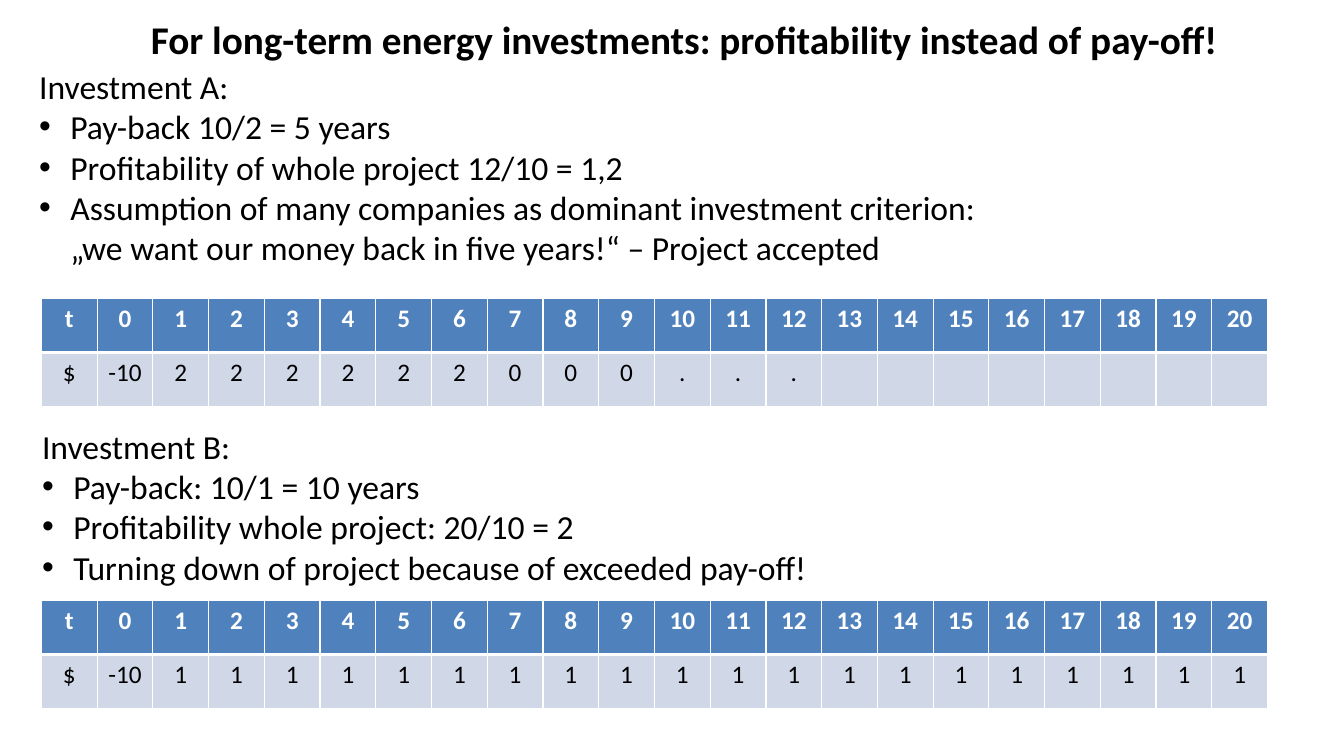
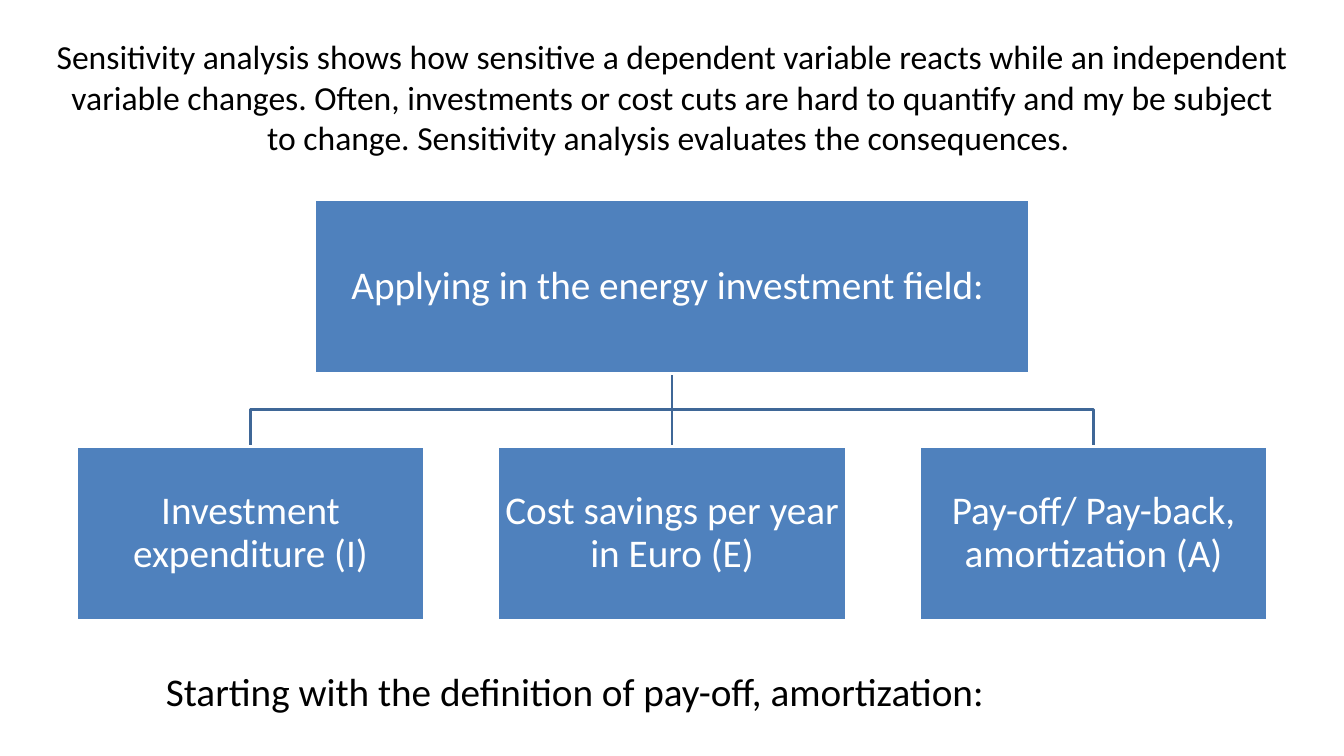
from lxml.etree import SubElement
from pptx import Presentation
from pptx.dml.color import RGBColor
from pptx.enum.shapes import MSO_CONNECTOR as CONNECTOR, MSO_SHAPE as SHAPE
from pptx.enum.text import MSO_ANCHOR as ANCHOR, PP_ALIGN as ALIGN
from pptx.oxml.ns import qn
from pptx.util import Inches, Pt

COLORS = {
    "text": "000000",
    "white": "FFFFFF",
    "blue": "4F81BD",
    "pale": "D0D8E8",
    "line": "3F6797",
}
COLORS = {name: RGBColor.from_string(value) for name, value in COLORS.items()}
FONT = "Calibri"
INDENT = Inches(0.31)

presentation = Presentation()
presentation.slide_width = Inches(13.33)
presentation.slide_height = Inches(7.5)
blank = presentation.slide_layouts[6]


def place(*percents):
    """Turn percentages of the slide's width and height, in turn, into lengths."""
    sides = (presentation.slide_width, presentation.slide_height) * 2
    return [round(side * percent / 100) for side, percent in zip(sides, percents)]


def write(frame, *lines, size=24, color="text", bold=False, align=ALIGN.LEFT,
          spacing=None, bulleted=False):
    """Fill a text frame; with bulleted, every line after the first gets a bullet."""
    frame.word_wrap = True
    for number, line in enumerate(lines):
        paragraph = frame.add_paragraph() if number else frame.paragraphs[0]
        paragraph.text = line
        paragraph.alignment = align
        paragraph.line_spacing = spacing
        for run in paragraph.runs:
            run.font.name = FONT
            run.font.size = Pt(size)
            run.font.bold = bold
            run.font.color.rgb = COLORS[color]
        if bulleted and number:
            properties = paragraph._p.get_or_add_pPr()
            properties.set("marL", str(INDENT))
            properties.set("indent", str(-INDENT))
            SubElement(properties, qn("a:buFont"), typeface="Arial")
            SubElement(properties, qn("a:buChar"), char="•")


# Slide 1: two investments compared
slide = presentation.slides.add_slide(blank)
title = slide.shapes.add_textbox(*place(7.45, 1.4, 86.87, 7.6))
write(title.text_frame,
      "For long-term energy investments: profitability instead of pay-off!",
      size=28, bold=True, align=ALIGN.CENTER)

years = ["t"] + [str(year) for year in range(21)]
investments = [
    {
        "box": (2.17, 8.05, 81.1, 28.27),
        "lines": ["Investment A:",
                  "Pay-back 10/2 = 5 years",
                  "Profitability of whole project 12/10 = 1,2",
                  "Assumption of many companies as dominant investment criterion: \n"
                  "„we want our money back in five years!“ – Project accepted"],
        "table_top": 39.45,
        "flows": ["2"] * 6 + ["0"] * 3 + ["."] * 3 + [""] * 8,
    },
    {
        "box": (2.39, 55.64, 68.1, 26.93),
        "lines": ["Investment B:",
                  "Pay-back: 10/1 = 10 years",
                  "Profitability whole project: 20/10 = 2",
                  "Turning down of project because of exceeded pay-off!"],
        "table_top": 79.38,
        "flows": ["1"] * 20,
    },
]
# Per row: fill, text colour, bold, border widths (left, right, top, bottom)
row_styles = [("blue", "white", True, (1, 1, 1, 3)),
              ("pale", "text", False, (1, 1, 3, 1))]

for investment in investments:
    box = slide.shapes.add_textbox(*place(*investment["box"]))
    write(box.text_frame, *investment["lines"], bulleted=True)

    rows = [years, ["$", "-10"] + investment["flows"]]
    table = slide.shapes.add_table(
        len(rows), len(years),
        *place(3.08, investment["table_top"], 91.25, 14.4)).table
    for row, (values, style) in enumerate(zip(rows, row_styles)):
        fill, color, bold, borders = style
        for column, value in enumerate(values):
            cell = table.cell(row, column)
            write(cell.text_frame, value, size=18, color=color, bold=bold,
                  align=ALIGN.CENTER)
            # Borders come before the fill in the cell's XML
            for side, width in zip("LRTB", borders):
                border = SubElement(cell._tc.get_or_add_tcPr(), qn(f"a:ln{side}"),
                                    w=str(Pt(width)))
                solid = SubElement(border, qn("a:solidFill"))
                SubElement(solid, qn("a:srgbClr"), val=str(COLORS["white"]))
            cell.fill.solid()
            cell.fill.fore_color.rgb = COLORS[fill]

# Slide 2: sensitivity analysis
slide = presentation.slides.add_slide(blank)
introduction = slide.shapes.add_textbox(*place(3.35, 4.13, 93.32, 17.47))
write(introduction.text_frame,
      "Sensitivity analysis shows how sensitive a dependent variable reacts while an "
      "independent variable changes. Often, investments or cost cuts are hard to "
      "quantify and my be subject to change. Sensitivity analysis evaluates the "
      "consequences. ",
      align=ALIGN.CENTER)

# Tree grid: one root above three evenly spaced branches
root_width, branch_width, box_height = 53.2, 25.9, 23
root_top, branch_top = 26.4, 59.05
root_bottom = root_top + box_height
bar = (root_bottom + branch_top) / 2
left, middle, right = centers = [50 + 31.36 * step for step in (-1, 0, 1)]

# Tree lines: a bent one to each outer branch, a straight one to the middle
tree_lines = []
for center in (right, left):
    builder = slide.shapes.build_freeform(*place(middle, root_bottom))
    builder.add_line_segments(
        [place(middle, bar), place(center, bar), place(center, branch_top)],
        close=False)
    bent = builder.convert_to_shape()
    bent.fill.background()
    bent.shadow.inherit = False
    tree_lines.append(bent)
straight = slide.shapes.add_connector(
    CONNECTOR.STRAIGHT, *place(middle, root_bottom, middle, branch_top))
tree_lines.append(straight)
for tree_line in tree_lines:
    tree_line.line.color.rgb = COLORS["line"]
    tree_line.line.width = Pt(2)
SubElement(straight._element.spPr, qn("a:effectLst"))

# Tree boxes
branches = ["Investment expenditure (I)",
            "Cost savings per year in Euro (E)",
            "Pay-off/ Pay-back, amortization (A)"]
boxes = [("Applying in the energy investment field: ", middle, root_top, root_width)]
boxes += [(label, center, branch_top, branch_width)
          for label, center in zip(branches, centers)]
for label, center, top, width in boxes:
    shape = slide.shapes.add_shape(
        SHAPE.RECTANGLE, *place(center - width / 2, top, width, box_height))
    shape.shadow.inherit = False
    shape.fill.solid()
    shape.fill.fore_color.rgb = COLORS["blue"]
    shape.line.color.rgb = COLORS["white"]
    shape.line.width = Pt(2)
    frame = shape.text_frame
    frame.vertical_anchor = ANCHOR.MIDDLE
    frame.margin_left = frame.margin_right = Inches(0.02)
    frame.margin_top = frame.margin_bottom = Inches(0.02)
    write(frame, label, size=28, color="white", align=ALIGN.CENTER, spacing=0.9)

# Lead-in to the next topic
lead_in = slide.shapes.add_textbox(*place(11.6, 87.6, 62.64, 7.6))
write(lead_in.text_frame, "Starting with the definition of pay-off, amortization:",
      size=28)

presentation.save("out.pptx")
